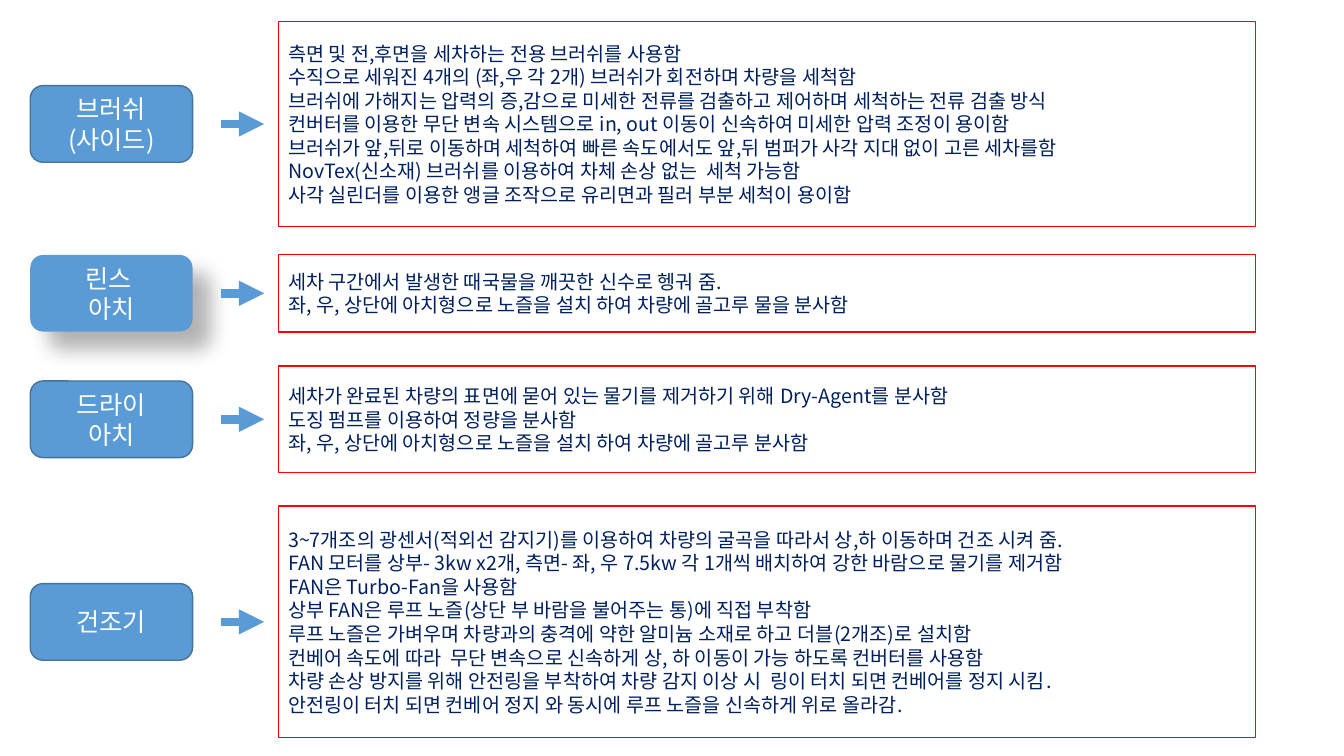
from pptx import Presentation, util as u
from pptx.dml.color import RGBColor
from pptx.enum import shapes, text
from pptx.oxml import parse_xml
from pptx.oxml.ns import nsdecls, qn
from lxml import etree

FONT = "Noto Sans CJK KR"
COLORS = {"blue": "5B9BD5", "edge": "43739E", "red": "FF0000",
          "navy": "002060", "white": "FFFFFF", "black": "000000"}

# Each row: middle, box height, label lines, detail lines, raised label
ROWS = [
    (1.23, 2.03, ["브러쉬", "(사이드)"], [
        "측면 및 전,후면을 세차하는 전용 브러쉬를 사용함",
        "수직으로 세워진 4개의 (좌,우 각 2개) 브러쉬가 회전하며 차량을 세척함",
        "브러쉬에 가해지는 압력의 증,감으로 미세한 전류를 검출하고 제어하며 세척하는 전류 검출 방식",
        "컨버터를 이용한 무단 변속 시스템으로 in, out 이동이 신속하여 미세한 압력 조정이 용이함",
        "브러쉬가 앞,뒤로 이동하며 세척하여 빠른 속도에서도 앞,뒤 범퍼가 사각 지대 없이 고른 세차를함",
        "NovTex(신소재) 브러쉬를 이용하여 차체 손상 없는  세척 가능함",
        "사각 실린더를 이용한 앵글 조작으로 유리면과 필러 부분 세척이 용이함",
    ], False),
    (2.91, 0.77, ["린스 ", "아치"], [
        "세차 구간에서 발생한 때국물을 깨끗한 신수로 헹궈 줌.",
        "좌, 우, 상단에 아치형으로 노즐을 설치 하여 차량에 골고루 물을 분사함",
    ], True),
    (4.16, 1.06, ["드라이", "아치"], [
        "세차가 완료된 차량의 표면에 묻어 있는 물기를 제거하기 위해 Dry-Agent를 분사함",
        "도징 펌프를 이용하여 정량을 분사함",
        "좌, 우, 상단에 아치형으로 노즐을 설치 하여 차량에 골고루 분사함",
    ], False),
    (6.17, 2.3, ["건조기"], [
        "3~7개조의 광센서(적외선 감지기)를 이용하여 차량의 굴곡을 따라서 상,하 이동하며 건조 시켜 줌.",
        "FAN 모터를 상부- 3kw x2개, 측면- 좌, 우 7.5kw 각 1개씩 배치하여 강한 바람으로 물기를 제거함",
        "FAN은 Turbo-Fan을 사용함",
        "상부 FAN은 루프 노즐(상단 부 바람을 불어주는 통)에 직접 부착함",
        "루프 노즐은 가벼우며 차량과의 충격에 약한 알미늄 소재로 하고 더블(2개조)로 설치함",
        "컨베어 속도에 따라  무단 변속으로 신속하게 상, 하 이동이 가능 하도록 컨버터를 사용함",
        "차량 손상 방지를 위해 안전링을 부착하여 차량 감지 이상 시  링이 터치 되면 컨베어를 정지 시킴.",
        "안전링이 터치 되면 컨베어 정지 와 동시에 루프 노즐을 신속하게 위로 올라감.",
    ], False),
]


def rgb(name):
    return RGBColor.from_string(COLORS[name])


def write(shape, lines, size, color, align):
    frame = shape.text_frame
    frame.word_wrap = True
    frame.vertical_anchor = text.MSO_ANCHOR.MIDDLE
    for i, line in enumerate(lines):
        para = frame.paragraphs[0] if i == 0 else frame.add_paragraph()
        para.alignment = align
        para.line_spacing = u.Pt(size * 1.2)
        run = para.add_run()
        run.text = line
        run.font.size = u.Pt(size)
        run.font.name = FONT
        run.font.color.rgb = rgb(color)
        etree.SubElement(run.font._element, qn("a:ea"), typeface=FONT)


def add_box(slide, kind, left, mid, width, height, fill=None, line=None):
    """Add a shape whose vertical middle is at mid."""
    box = slide.shapes.add_shape(kind, u.Inches(left), u.Inches(mid - height / 2),
                                 u.Inches(width), u.Inches(height))
    box.shadow.inherit = False
    if fill:
        box.fill.solid()
        box.fill.fore_color.rgb = rgb(fill)
    else:
        box.fill.background()
    if line:
        box.line.color.rgb = rgb(line)
        box.line.width = u.Pt(1)
    else:
        box.line.fill.background()
    return box


def add_shade(shape):
    """Cast a soft shadow to the lower right."""
    effects = shape._element.spPr.find(qn("a:effectLst"))
    effects.append(parse_xml(
        f'<a:outerShdw {nsdecls("a")} blurRad="{u.Pt(15)}" dist="{u.Pt(18)}" '
        f'dir="2700000" algn="tl" rotWithShape="0"><a:srgbClr val="{COLORS["black"]}">'
        '<a:alpha val="30000"/></a:srgbClr></a:outerShdw>'))


def add_label(slide, mid, lines, raised):
    label = add_box(slide, shapes.MSO_SHAPE.ROUNDED_RECTANGLE, 0.3, mid, 1.61, 0.76,
                    fill="blue", line=None if raised else "edge")
    if raised:
        add_shade(label)
    write(label, lines, size=18, color="white", align=text.PP_ALIGN.CENTER)


def add_arrow(slide, mid):
    arrow = slide.shapes.add_connector(
        shapes.MSO_CONNECTOR.STRAIGHT,
        u.Inches(2.19), u.Inches(mid), u.Inches(2.62), u.Inches(mid))
    arrow.line.color.rgb = rgb("blue")
    arrow.line.width = u.Pt(6)
    etree.SubElement(arrow.line._get_or_add_ln(), qn("a:tailEnd"), type="triangle")
    etree.SubElement(arrow._element.spPr, qn("a:effectLst"))


def add_detail(slide, mid, height, lines):
    box = add_box(slide, shapes.MSO_SHAPE.RECTANGLE, 2.76, mid, 9.69, height, line="red")
    write(box, lines, size=14, color="navy", align=text.PP_ALIGN.LEFT)


def main():
    deck = Presentation()
    deck.slide_width, deck.slide_height = u.Inches(13.33), u.Inches(7.5)
    slide = deck.slides.add_slide(deck.slide_layouts[6])
    for mid, height, label, detail, raised in ROWS:
        add_label(slide, mid, label, raised)
        add_arrow(slide, mid)
        add_detail(slide, mid, height, detail)
    deck.save("out.pptx")


if __name__ == "__main__":
    main()
